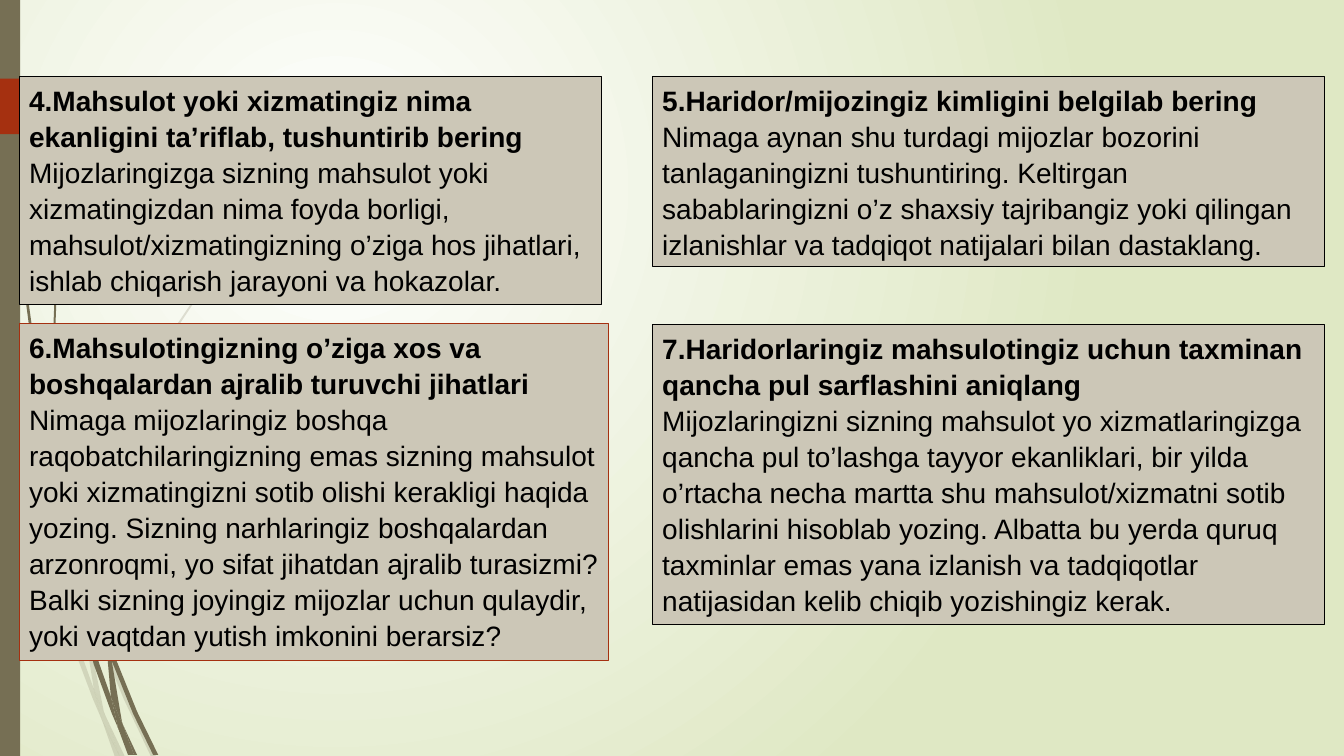
from dataclasses import dataclass

from lxml.etree import SubElement
from pptx import Presentation
from pptx.dml.color import RGBColor
from pptx.enum.shapes import MSO_SHAPE
from pptx.enum.text import MSO_ANCHOR, MSO_AUTO_SIZE, PP_ALIGN
from pptx.oxml.ns import qn
from pptx.util import Emu, Pt


@dataclass(frozen=True)
class Theme:
    paper: str = "FFFFFF"
    meadow: str = "DFE8C4"
    olive: str = "766F54"
    rust: str = "A53010"
    sand: str = "CCC7B7"
    ink: str = "000000"
    font: str = "Arial"
    text_size: float = 20
    line_width: float = 0.75
    line_spacing: float = 1.07
    space_after: float = 15
    faint_percent: int = 20


PX = 9144  # 100 px to the inch
WIDTH, HEIGHT = 1333, 750
LEFT, RIGHT = 19, 647

FAINT_STEMS = [
    [(92, 607), (88, 596), (88, 610), (123, 694), (150, 751), (155, 751), (127, 692)],
    [(119, 751), (124, 751), (105, 711)],
    [(93, 683), (70, 619), (31, 469), (17, 376), (11, 350), (28, 470),
     (65, 621), (92, 693), (101, 714), (99, 707)],
    [(84, 599), (87, 646), (93, 683), (96, 692), (105, 711), (103, 706),
     (91, 646), (88, 610), (88, 608)],
    [(88, 584), (110, 462), (160, 349), (229, 245), (268, 198), (290, 175), (312, 154),
     (312, 153), (289, 175), (268, 197), (228, 244), (158, 348), (107, 461),
     (85, 584), (85, 586), (88, 596)],
    [(101, 714), (114, 751), (119, 751)],
    [(96, 692), (93, 683), (99, 707), (101, 714), (119, 751), (105, 711)],
]
DARK_STEMS = [
    [(7, 110), (17, 233), (33, 355), (56, 477), (57, 481), (55, 457), (55, 453),
     (36, 355), (19, 232), (8, 109), (5, 48), (4, 0), (3, 0), (4, 48)],
    [(113, 649), (110, 641), (111, 656), (132, 708), (152, 749), (157, 749), (136, 706)],
    [(110, 691), (98, 657), (72, 556), (64, 505), (57, 477), (68, 557),
     (93, 659), (111, 708), (117, 722), (116, 717)],
    [(60, 472), (58, 453), (54, 349), (58, 245), (63, 193), (70, 141),
     (62, 193), (56, 245), (52, 349), (55, 449)],
    [(133, 749), (136, 749), (122, 719)],
    [(117, 722), (127, 749), (131, 749)],
    [(106, 645), (110, 691), (116, 706), (122, 719), (121, 716), (111, 656), (109, 651)],
    [(116, 706), (110, 691), (116, 717), (117, 722), (130, 749), (133, 749), (122, 719)],
]

# left, top, width, height, outline, heading, body
QUESTIONS = [
    (LEFT, 76, 578, 226, Theme.ink,
     "4.Mahsulot yoki xizmatingiz nima ekanligini ta’riflab, tushuntirib bering",
     "Mijozlaringizga sizning mahsulot yoki xizmatingizdan nima foyda borligi, "
     "mahsulot/xizmatingizning o’ziga hos jihatlari, ishlab chiqarish jarayoni va hokazolar."),
    (RIGHT, 76, 667, 188, Theme.ink,
     "5.Haridor/mijozingiz kimligini belgilab bering",
     "Nimaga aynan shu turdagi mijozlar bozorini tanlaganingizni tushuntiring. Keltirgan "
     "sabablaringizni o’z shaxsiy tajribangiz yoki qilingan izlanishlar va tadqiqot "
     "natijalari bilan dastaklang."),
    (LEFT, 321, 585, 334, Theme.rust,
     "6.Mahsulotingizning o’ziga xos va boshqalardan ajralib turuvchi jihatlari",
     "Nimaga mijozlaringiz boshqa raqobatchilaringizning emas sizning mahsulot yoki "
     "xizmatingizni sotib olishi kerakligi haqida yozing. Sizning narhlaringiz boshqalardan "
     "arzonroqmi, yo sifat jihatdan ajralib turasizmi? Balki sizning joyingiz mijozlar uchun "
     "qulaydir, yoki vaqtdan yutish imkonini berarsiz?"),
    (RIGHT, 322, 667, 298, Theme.ink,
     "7.Haridorlaringiz mahsulotingiz uchun taxminan qancha pul sarflashini aniqlang",
     "Mijozlaringizni sizning mahsulot yo xizmatlaringizga qancha pul to’lashga tayyor "
     "ekanliklari, bir yilda o’rtacha necha martta shu mahsulot/xizmatni sotib olishlarini "
     "hisoblab yozing. Albatta bu yerda quruq taxminlar emas yana izlanish va tadqiqotlar "
     "natijasidan kelib chiqib yozishingiz kerak."),
]


class SlideBuilder:
    def __init__(self, slide, theme):
        self.slide = slide
        self.theme = theme

    def background(self):
        """Radial gradient, light towards the upper left."""
        fill = self.slide.background.fill
        fill.gradient()
        for stop, color, position in zip(
            fill.gradient_stops, (self.theme.paper, self.theme.meadow), (0, 1)
        ):
            stop.color.rgb = RGBColor.from_string(color)
            stop.position = position
        gradient = self.slide.element.find(".//" + qn("a:gradFill"))
        gradient.remove(gradient.find(qn("a:lin")))
        circle = SubElement(gradient, qn("a:path"), {"path": "circle"})
        SubElement(circle, qn("a:fillToRect"),
                   {"l": "50000", "t": "50000", "r": "100000", "b": "100000"})

    def paint(self, shape, fill, outline=None):
        shape.shadow.inherit = False
        shape.fill.solid()
        shape.fill.fore_color.rgb = RGBColor.from_string(fill)
        if outline:
            shape.line.color.rgb = RGBColor.from_string(outline)
            shape.line.width = Pt(self.theme.line_width)
        else:
            shape.line.fill.background()
        return shape

    def block(self, kind, left, top, width, height, fill, outline=None):
        box = [Emu(length * PX) for length in (left, top, width, height)]
        return self.paint(self.slide.shapes.add_shape(kind, *box), fill, outline)

    def stem(self, points, opacity=100):
        start, *rest = points
        freeform = self.slide.shapes.build_freeform(*start, scale=PX)
        freeform.add_line_segments(rest, close=True)
        shape = self.paint(freeform.convert_to_shape(), self.theme.olive)
        if opacity < 100:
            color = shape.element.spPr.find(qn("a:solidFill")).find(qn("a:srgbClr"))
            SubElement(color, qn("a:alpha"), {"val": str(opacity * 1000)})

    def question(self, left, top, width, height, outline, heading, body):
        theme = self.theme
        shape = self.block(MSO_SHAPE.RECTANGLE, left, top, width, height, theme.sand, outline)
        frame = shape.text_frame
        frame.word_wrap = True
        frame.auto_size = MSO_AUTO_SIZE.SHAPE_TO_FIT_TEXT
        frame.vertical_anchor = MSO_ANCHOR.TOP
        frame.text = f"{heading}\n{body}"
        for paragraph, bold, after in zip(frame.paragraphs, (True, False), (0, theme.space_after)):
            paragraph.alignment = PP_ALIGN.LEFT
            paragraph.line_spacing = theme.line_spacing
            paragraph.space_after = Pt(after)
            paragraph.font.name = theme.font
            paragraph.font.size = Pt(theme.text_size)
            paragraph.font.bold = bold
            paragraph.font.color.rgb = RGBColor.from_string(theme.ink)


def main():
    presentation = Presentation()
    presentation.slide_width = Emu(WIDTH * PX)
    presentation.slide_height = Emu(HEIGHT * PX)
    theme = Theme()
    builder = SlideBuilder(
        presentation.slides.add_slide(presentation.slide_layouts[6]), theme
    )
    builder.background()
    for points in FAINT_STEMS:
        builder.stem(points, theme.faint_percent)
    for points in DARK_STEMS:
        builder.stem(points)
    builder.block(MSO_SHAPE.RECTANGLE, 0, 0, 20, HEIGHT, theme.olive)
    builder.block(MSO_SHAPE.PENTAGON, 0, 78, 174, 55, theme.rust)
    for question in QUESTIONS:
        builder.question(*question)
    presentation.save("out.pptx")


if __name__ == "__main__":
    main()
